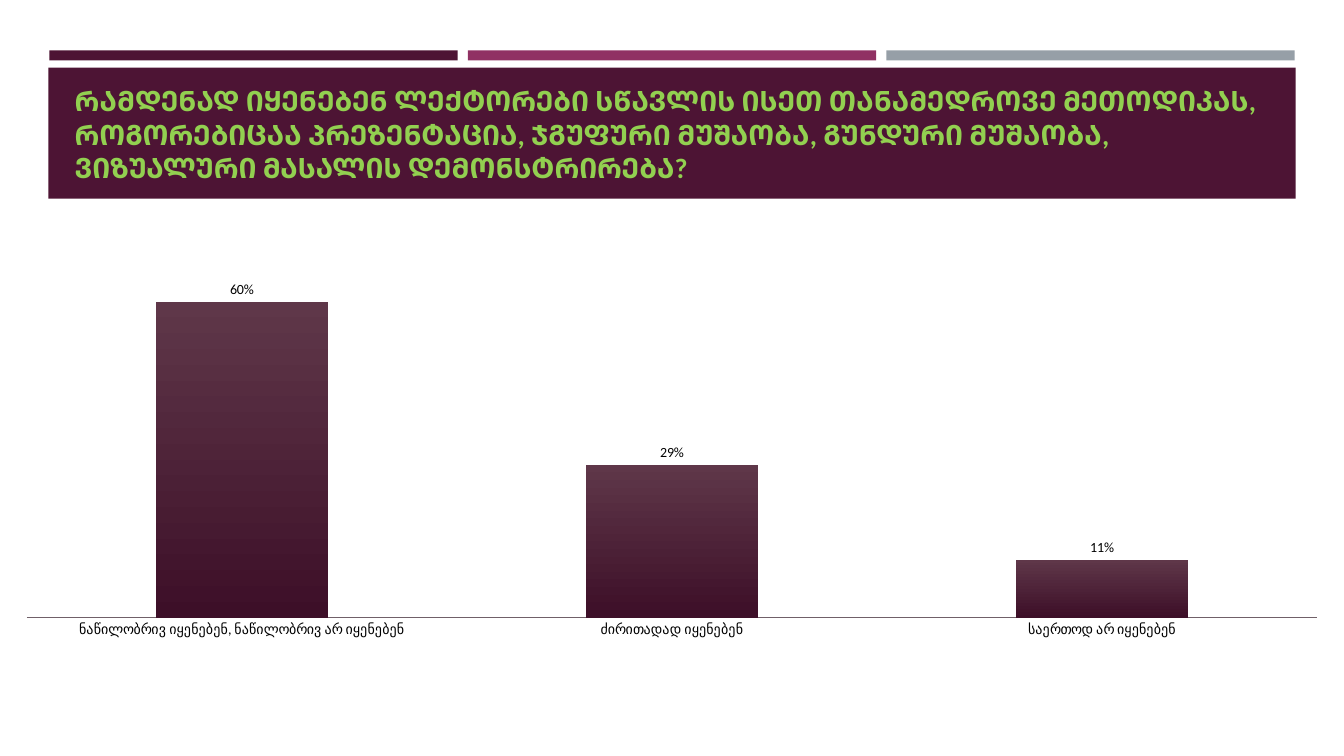
from lxml import etree
from pptx import Presentation
from pptx.chart.data import CategoryChartData
from pptx.dml.color import RGBColor
from pptx.enum import chart as ch, shapes, text
from pptx.oxml.ns import qn
from pptx.util import Inches, Pt

PLUM = RGBColor(0x4D, 0x14, 0x34)
ROSE = RGBColor(0x90, 0x31, 0x63)
GRAY = RGBColor(0x96, 0x9F, 0xA7)
LIME = RGBColor(0x92, 0xD0, 0x50)
BLACK = RGBColor(0, 0, 0)
AXIS = RGBColor(0x70, 0x60, 0x68)
LIGHT = RGBColor(0x5F, 0x37, 0x49)
DARK = RGBColor(0x3D, 0x0F, 0x28)
FONT = "Calibri"

TITLE = ("ᲠᲐᲛᲓᲔᲜᲐᲓ ᲘᲧᲔᲜᲔᲑᲔᲜ ᲚᲔᲥᲢᲝᲠᲔᲑᲘ ᲡᲬᲐᲕᲚᲘᲡ ᲘᲡᲔᲗ ᲗᲐᲜᲐᲛᲔᲓᲠᲝᲕᲔ ᲛᲔᲗᲝᲓᲘᲙᲐᲡ, "
         "ᲠᲝᲒᲝᲠᲔᲑᲘᲪᲐᲐ ᲞᲠᲔᲖᲔᲜᲢᲐᲪᲘᲐ, ᲯᲒᲣᲤᲣᲠᲘ ᲛᲣᲨᲐᲝᲑᲐ, ᲒᲣᲜᲓᲣᲠᲘ ᲛᲣᲨᲐᲝᲑᲐ, "
         "ᲕᲘᲖᲣᲐᲚᲣᲠᲘ ᲛᲐᲡᲐᲚᲘᲡ ᲓᲔᲛᲝᲜᲡᲢᲠᲘᲠᲔᲑᲐ?")
SHARES = {
    "ნაწილობრივ იყენებენ, ნაწილობრივ არ იყენებენ": 0.6,
    "ძირითადად იყენებენ": 0.29,
    "საერთოდ არ იყენებენ": 0.11,
}


def add_bar(slide, left, top, width, height, color):
    bar = slide.shapes.add_shape(shapes.MSO_SHAPE.RECTANGLE, Inches(left),
                                 Inches(top), Inches(width), Inches(height))
    bar.shadow.inherit = False
    bar.fill.solid()
    bar.fill.fore_color.rgb = color
    bar.line.fill.background()


def set_title(slide):
    title = slide.shapes.title
    # Bring the title in front of its band
    slide.shapes._spTree.append(title._element)
    title.left, title.top = Inches(0.64), Inches(0.77)
    title.width, title.height = Inches(12.06), Inches(1.11)
    frame = title.text_frame
    frame.text = TITLE
    frame.word_wrap = True
    frame.auto_size = text.MSO_AUTO_SIZE.NONE
    frame.vertical_anchor = text.MSO_ANCHOR.BOTTOM
    para = frame.paragraphs[0]
    para.alignment = text.PP_ALIGN.LEFT
    para.font.name, para.font.size = FONT, Pt(20)
    para.font.bold = True
    para.font.color.rgb = LIME


def set_plot(chart, **box):
    """Fix the inner plot area, in fractions of the chart."""
    area = chart._chartSpace.chart.plotArea
    for old in area.findall(qn("c:layout")):
        area.remove(old)
    layout = etree.Element(qn("c:layout"))
    area.insert(0, layout)
    manual = etree.SubElement(layout, qn("c:manualLayout"))
    values = {"layoutTarget": "inner", "xMode": "edge", "yMode": "edge", **box}
    for tag, val in values.items():
        etree.SubElement(manual, qn("c:" + tag)).set("val", str(val))


def add_chart(slide):
    data = CategoryChartData(number_format="0%")
    data.categories = list(SHARES)
    data.add_series("Series 1", list(SHARES.values()))
    chart = slide.shapes.add_chart(
        ch.XL_CHART_TYPE.COLUMN_CLUSTERED, Inches(0), Inches(2.39),
        Inches(13.33), Inches(4.02), data).chart
    chart.has_legend = False
    chart.has_title = False
    chart.font.name, chart.font.size = FONT, Pt(10)
    chart.font.color.rgb = BLACK
    set_plot(chart, x=0.02, y=0.02, w=0.96, h=0.91)

    cats = chart.category_axis
    cats.major_tick_mark = ch.XL_TICK_MARK.NONE
    cats.format.line.color.rgb = AXIS
    cats.format.line.width = Pt(1)
    vals = chart.value_axis
    vals.visible = False
    vals.has_major_gridlines = False
    vals.minimum_scale, vals.maximum_scale = 0, 0.7
    vals.tick_labels.number_format = "0%"
    vals.tick_labels.number_format_is_linked = False

    plot = chart.plots[0]
    plot.gap_width, plot.overlap = 150, -25
    plot.vary_by_categories = False
    fill = plot.series[0].format.fill
    fill.gradient()
    fill.gradient_angle = 270
    for stop, color in zip(fill.gradient_stops, (LIGHT, DARK)):
        stop.color.rgb = color
    plot.has_data_labels = True
    labels = plot.data_labels
    labels.show_value = True
    labels.number_format = "0%"
    labels.number_format_is_linked = False
    labels.position = ch.XL_LABEL_POSITION.OUTSIDE_END


def main():
    deck = Presentation()
    deck.slide_width, deck.slide_height = Inches(13.33), Inches(7.5)
    slide = deck.slides.add_slide(deck.slide_layouts[5])
    for i, color in enumerate((PLUM, ROSE, GRAY)):
        add_bar(slide, 0.49 + 4.15 * i, 0.5, 4.05, 0.1, color)
    add_bar(slide, 0.48, 0.67, 12.37, 1.3, PLUM)
    set_title(slide)
    add_chart(slide)
    deck.save("out.pptx")


if __name__ == "__main__":
    main()
